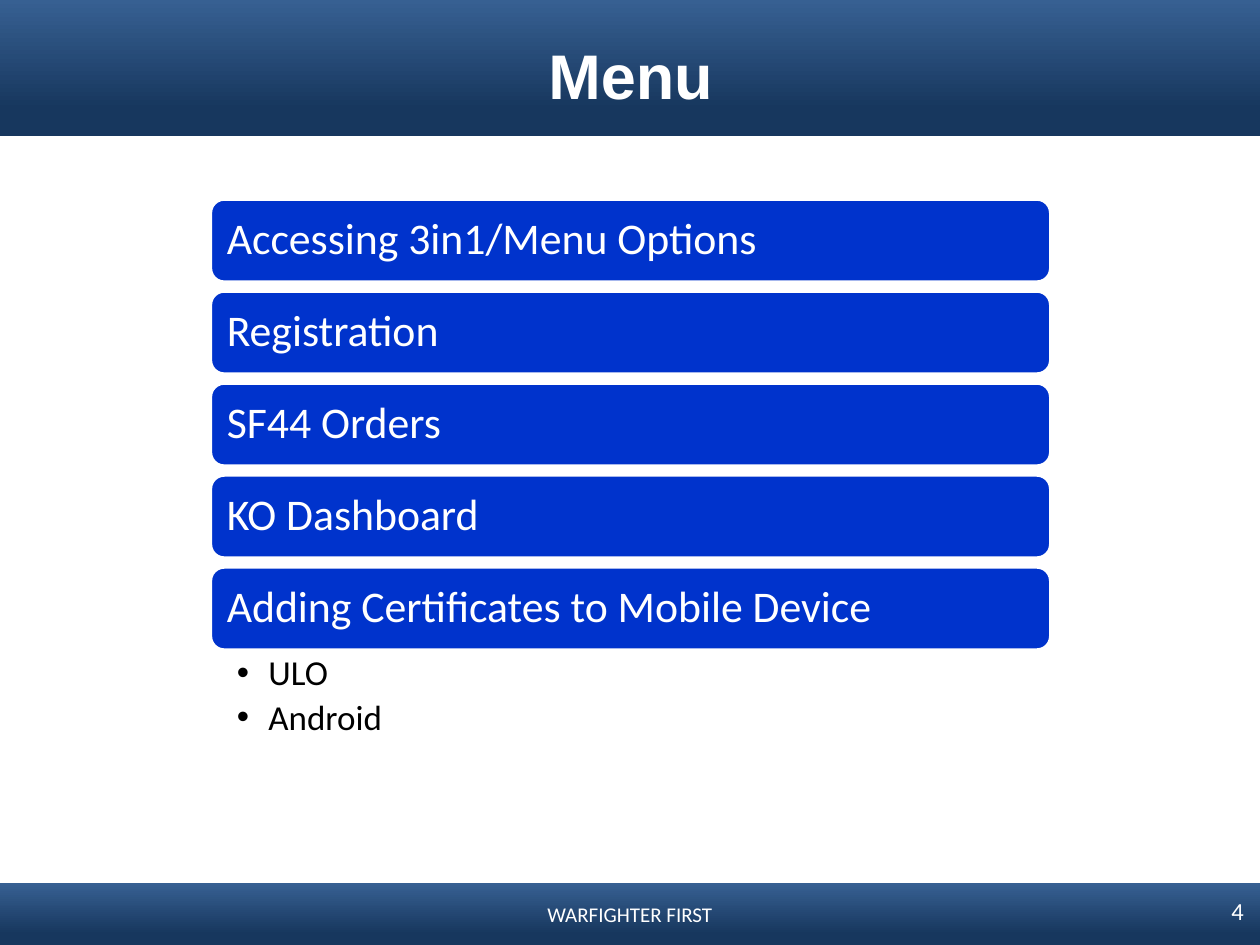
from typing import NamedTuple

import pptx
import pptx.dml.color
import pptx.enum.shapes
import pptx.enum.text
import pptx.util
from lxml import etree
from pptx.oxml.ns import qn

Inches = pptx.util.Inches
Pt = pptx.util.Pt
RGBColor = pptx.dml.color.RGBColor
Align = pptx.enum.text.PP_ALIGN
Anchor = pptx.enum.text.MSO_ANCHOR
Preset = pptx.enum.shapes.MSO_SHAPE

WHITE = RGBColor(0xFF, 0xFF, 0xFF)
BLACK = RGBColor(0x00, 0x00, 0x00)
NAVY = RGBColor(0x17, 0x37, 0x5E)
STEEL = RGBColor(0x37, 0x60, 0x92)
MENU_BLUE = RGBColor(0x00, 0x33, 0xCC)


class Box(NamedTuple):
    left: float
    top: float
    width: float
    height: float

    def lengths(self) -> list:
        return [Inches(value) for value in self]


class MenuItem(NamedTuple):
    label: str
    row: int


MENU = [MenuItem(label, row) for row, label in enumerate([
    "Accessing 3in1/Menu Options",
    "Registration",
    "SF44 Orders",
    "KO Dashboard",
    "Adding Certificates to Mobile Device",
])]
MENU_LEFT, MENU_TOP, MENU_WIDTH = 1.67, 1.58, 6.67
ITEM_HEIGHT, ITEM_GAP = 0.66, 0.07


def add_bullet(paragraph, indent: float) -> None:
    properties = paragraph._p.get_or_add_pPr()
    properties.set("marL", str(Inches(indent)))
    properties.set("indent", str(-Inches(indent)))
    etree.SubElement(properties, qn("a:buChar"), char="•")


def write(frame, text: str, *, size: float, color=WHITE, font="Calibri", bold=False,
          align=Align.LEFT, anchor=Anchor.TOP, insets=(0.1, 0.05, 0.1, 0.05),
          spacing=1.0, after=0, level=0, bullet_indent=0) -> None:
    frame.text = text
    frame.word_wrap = True
    frame.auto_size = pptx.enum.text.MSO_AUTO_SIZE.NONE
    frame.vertical_anchor = anchor
    (frame.margin_left, frame.margin_top,
     frame.margin_right, frame.margin_bottom) = map(Inches, insets)
    for paragraph in frame.paragraphs:
        paragraph.level = level
        paragraph.alignment = align
        paragraph.line_spacing = spacing
        paragraph.space_before = Pt(0)
        paragraph.space_after = Pt(after)
        if bullet_indent:
            add_bullet(paragraph, bullet_indent)
        for run in paragraph.runs:
            run.font.name = font
            run.font.size = Pt(size)
            run.font.bold = bold
            run.font.color.rgb = color


def place(placeholder, box: Box) -> None:
    (placeholder.left, placeholder.top,
     placeholder.width, placeholder.height) = box.lengths()


def add_band(slide, box: Box) -> None:
    band = slide.shapes.add_shape(Preset.RECTANGLE, *box.lengths())
    band.shadow.inherit = False
    band.line.fill.background()
    band.fill.gradient()
    band.fill.gradient_angle = 90
    for stop, position, color in zip(band.fill.gradient_stops, (0.2, 1), (NAVY, STEEL)):
        stop.position = position
        stop.color.rgb = color


def add_menu_item(slide, item: MenuItem) -> None:
    top = MENU_TOP + item.row * (ITEM_HEIGHT + ITEM_GAP)
    box = Box(MENU_LEFT, top, MENU_WIDTH, ITEM_HEIGHT)
    button = slide.shapes.add_shape(Preset.ROUNDED_RECTANGLE, *box.lengths())
    button.shadow.inherit = False
    button.fill.solid()
    button.fill.fore_color.rgb = MENU_BLUE
    button.line.color.rgb = WHITE
    button.line.width = Pt(2)
    write(button.text_frame, item.label, size=25, anchor=Anchor.MIDDLE,
          insets=(0.1, 0.1, 0.1, 0.1), spacing=0.9)


def add_label(slide, box: Box, text: str, **text_format) -> None:
    label = slide.shapes.add_textbox(*box.lengths())
    write(label.text_frame, text, **text_format)


def main() -> None:
    deck = pptx.Presentation()
    deck.slide_width, deck.slide_height = Inches(10), Inches(7.5)
    slide = deck.slides.add_slide(deck.slide_layouts[1])
    title, platforms = slide.placeholders

    add_band(slide, Box(0, 7.01, 10, 0.5))
    add_label(slide, Box(0, 7.11, 10, 0.3), "WARFIGHTER FIRST", size=12, align=Align.CENTER)
    add_band(slide, Box(0, 0, 10, 1.08))
    add_label(slide, Box(9.31, 7.03, 0.66, 0.4), "4", size=14,
              align=Align.RIGHT, anchor=Anchor.MIDDLE)

    place(title, Box(1.01, 0.24, 7.99, 0.63))
    write(title.text_frame, "Menu", size=36, font="Arial", bold=True, align=Align.CENTER)
    slide.shapes.element.append(title.element)

    for item in MENU:
        add_menu_item(slide, item)

    place(platforms, Box(MENU_LEFT, 5.17, MENU_WIDTH, 0.75))
    write(platforms.text_frame, "ULO\nAndroid", size=20, color=BLACK,
          insets=(0.21, 0.03, 0.19, 0.03), spacing=0.9, after=4, level=1,
          bullet_indent=0.25)
    slide.shapes.element.append(platforms.element)

    deck.save("out.pptx")


if __name__ == "__main__":
    main()
